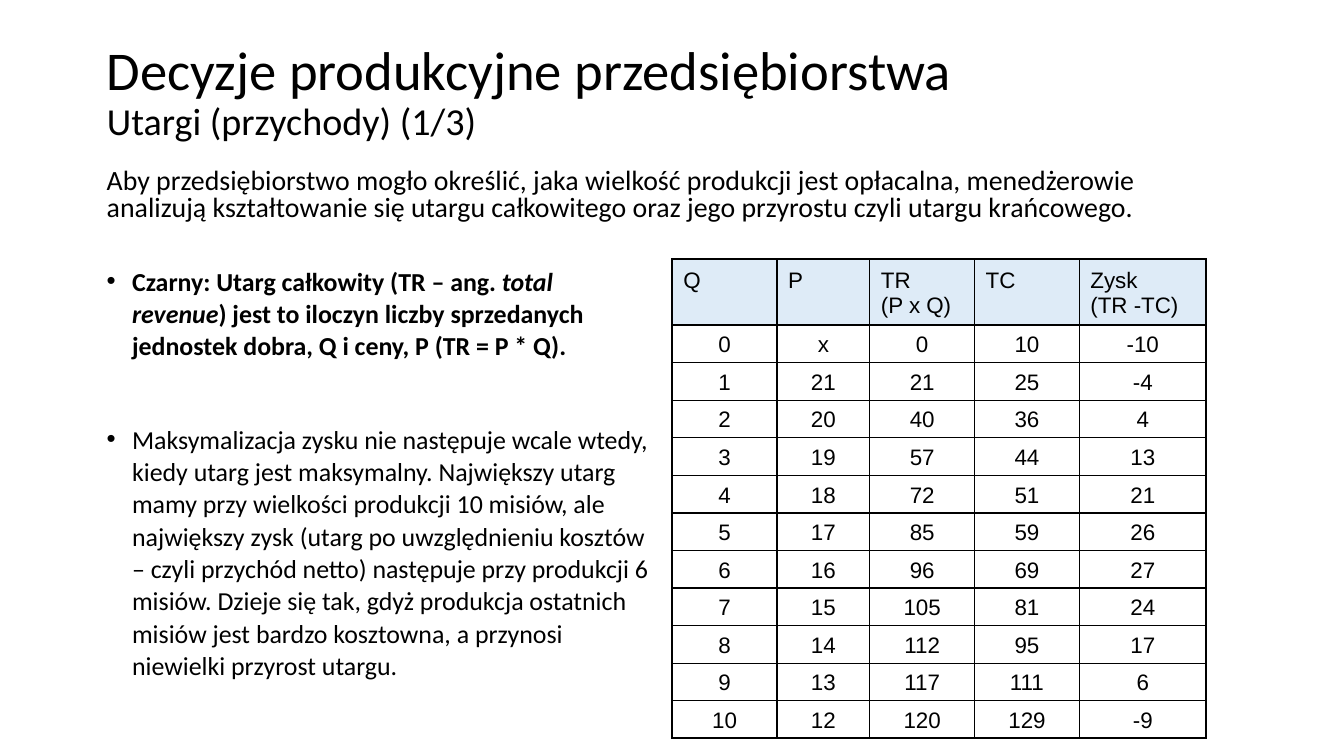
from dataclasses import dataclass

import pptx
import pptx.dml.color
import pptx.enum.text
import pptx.oxml
import pptx.oxml.ns
import pptx.util

Cm = pptx.util.Cm
Pt = pptx.util.Pt
RGB = pptx.dml.color.RGBColor
Align = pptx.enum.text.PP_ALIGN
Anchor = pptx.enum.text.MSO_ANCHOR
Fit = pptx.enum.text.MSO_AUTO_SIZE


@dataclass(frozen=True)
class Theme:
    ink: str = "000000"
    head: str = "DEEBF7"
    font: str = "Calibri"
    grid: str = "Arial"
    title: float = 39
    sub: float = 27.2
    intro: float = 19.9
    body: float = 18.5
    cell: float = 16
    thin: float = 1
    thick: float = 1.5


@dataclass(frozen=True)
class Box:
    left: float
    top: float
    width: float
    height: float

    def size(self) -> list:
        return [Cm(v) for v in (self.left, self.top, self.width, self.height)]


@dataclass(frozen=True)
class Run:
    text: str
    bold: bool = False
    slant: bool = False


@dataclass(frozen=True)
class Point:
    runs: tuple[Run, ...]
    space: float


THEME = Theme()
TITLE = Box(2.44, 0.76, 26.62, 3.18)
INTRO = Box(2.44, 4.14, 26.59, 1.65)
BODY = Box(2.44, 6.53, 14.2, 10.77)
GRID = Box(16.94, 6.53, 13.46, 12.04)
TOP_ROW = 1.63
WIDTHS = (2.64, 2.34, 2.64, 2.64, 3.2)
HEADS = (("Q",), ("P",), ("TR", "(P x Q)"), ("TC",), ("Zysk", "(TR -TC)"))
COSTS = (10, 25, 36, 44, 51, 59, 69, 81, 95, 111, 129)
LEAD = (
    "Aby przedsiębiorstwo mogło określić, jaka wielkość produkcji jest opłacalna, "
    "menedżerowie analizują kształtowanie się utargu całkowitego oraz jego przyrostu "
    "czyli utargu krańcowego."
)
POINTS = (
    Point((
        Run("Czarny: Utarg całkowity (TR – ang. ", bold=True),
        Run("total revenue", bold=True, slant=True),
        Run(") jest to iloczyn liczby sprzedanych jednostek dobra, Q i ceny, "
            "P (TR = P * Q).", bold=True),
    ), 10),
    Point((
        Run("Maksymalizacja zysku nie następuje wcale wtedy, kiedy utarg jest maksymalny. "
            "Największy utarg mamy przy wielkości produkcji 10 misiów, ale największy zysk "
            "(utarg po uwzględnieniu kosztów – czyli przychód netto) następuje przy "
            "produkcji 6 misiów. Dzieje się tak, gdyż produkcja ostatnich misiów jest "
            "bardzo kosztowna, a przynosi niewielki przyrost utargu."),
    ), 43.5),
)


def add_run(para, run: Run, size: float, face: str = THEME.font) -> None:
    part = para.add_run()
    part.text = run.text
    font = part.font
    font.name, font.size = face, Pt(size)
    font.bold, font.italic = run.bold, run.slant
    font.color.rgb = RGB.from_string(THEME.ink)


def add_box(slide, box: Box):
    frame = slide.shapes.add_textbox(*box.size()).text_frame
    frame.word_wrap = True
    return frame


def add_title(slide) -> None:
    shape = slide.shapes.title
    shape.left, shape.top, shape.width, shape.height = TITLE.size()
    frame = shape.text_frame
    frame.auto_size = Fit.NONE
    frame.vertical_anchor = Anchor.MIDDLE
    para = frame.paragraphs[0]
    para.alignment = Align.LEFT
    para.line_spacing = 0.9
    add_run(para, Run("Decyzje produkcyjne przedsiębiorstwa"), THEME.title)
    para.add_line_break()
    add_run(para, Run("Utargi (przychody) (1/3)"), THEME.sub)


def add_intro(slide) -> None:
    para = add_box(slide, INTRO).paragraphs[0]
    para.line_spacing = 0.8
    para.space_before = Pt(4)
    add_run(para, Run(LEAD), THEME.intro)


def set_bullet(para) -> None:
    props = para._p.get_or_add_pPr()
    props.set("marL", str(Cm(0.64)))
    props.set("indent", str(-Cm(0.64)))
    space = pptx.oxml.ns.nsdecls("a")
    props.append(pptx.oxml.parse_xml(f'<a:buFont {space} typeface="Arial"/>'))
    props.append(pptx.oxml.parse_xml(f'<a:buChar {space} char="•"/>'))


def add_points(slide) -> None:
    frame = add_box(slide, BODY)
    for i, point in enumerate(POINTS):
        para = frame.add_paragraph() if i else frame.paragraphs[0]
        para.line_spacing = 1.04
        para.space_before = Pt(point.space)
        set_bullet(para)
        for run in point.runs:
            add_run(para, run, THEME.body)


def set_edge(cell, side: str, width: float) -> None:
    cell._tc.get_or_add_tcPr().append(pptx.oxml.parse_xml(
        f'<a:ln{side} {pptx.oxml.ns.nsdecls("a")} w="{Pt(width)}">'
        f'<a:solidFill><a:srgbClr val="{THEME.ink}"/></a:solidFill></a:ln{side}>'))


def fill_cell(cell, lines: tuple[str, ...], head: bool) -> None:
    cell.margin_left = cell.margin_right = Cm(0.28)
    cell.margin_top = Cm(0.23 if head else 0.13)
    cell.margin_bottom = Cm(0.08 if head else 0.13)
    cell.vertical_anchor = Anchor.TOP if head else Anchor.BOTTOM
    if head:
        cell.fill.solid()
        cell.fill.fore_color.rgb = RGB.from_string(THEME.head)
    else:
        cell.fill.background()
    para = cell.text_frame.paragraphs[0]
    para.alignment = Align.LEFT if head else Align.CENTER
    for i, line in enumerate(lines):
        if i:
            para.add_line_break()
        add_run(para, Run(line), THEME.cell, THEME.grid)


def make_rows() -> list:
    """Work out revenue and profit; price falls by one with each unit."""
    rows = [HEADS]
    for count, cost in enumerate(COSTS):
        price = 22 - count if count else "x"
        gain = count * price if count else 0
        rows.append(tuple((str(v),) for v in (count, price, gain, cost, gain - cost)))
    return rows


def add_grid(slide) -> None:
    rows = make_rows()
    last, end = len(rows) - 1, len(WIDTHS) - 1
    table = slide.shapes.add_table(len(rows), len(WIDTHS), *GRID.size()).table
    table.first_row = table.horz_banding = False
    for col, width in zip(table.columns, WIDTHS):
        col.width = Cm(width)
    for r, row in enumerate(rows):
        table.rows[r].height = Cm((GRID.height - TOP_ROW) / last if r else TOP_ROW)
        for c, lines in enumerate(row):
            cell = table.cell(r, c)
            bold = {"L": c == 0, "R": c == end, "T": r < 2, "B": r in (0, last)}
            for side, heavy in bold.items():
                set_edge(cell, side, THEME.thick if heavy else THEME.thin)
            fill_cell(cell, lines, r == 0)


def main() -> None:
    deck = pptx.Presentation()
    deck.slide_width, deck.slide_height = Cm(33.87), Cm(19.05)
    slide = deck.slides.add_slide(deck.slide_layouts[5])
    add_title(slide)
    add_points(slide)
    add_grid(slide)
    add_intro(slide)
    deck.save("out.pptx")


if __name__ == "__main__":
    main()
